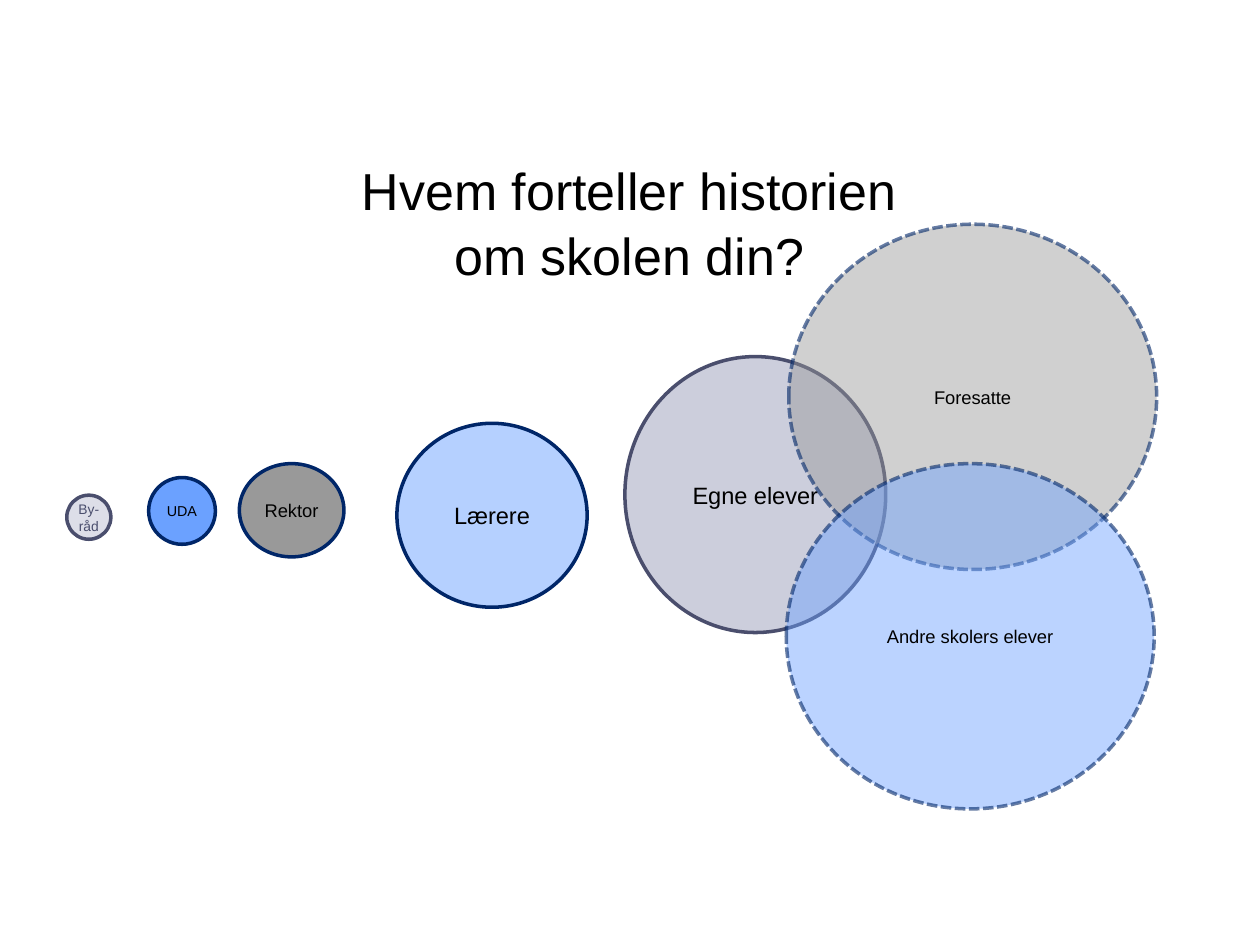
from dataclasses import dataclass

from pptx import Presentation
from pptx.dml.color import RGBColor as RGB
from pptx.enum.dml import MSO_LINE as Dash
from pptx.enum.shapes import MSO_SHAPE as Shape
from pptx.enum.text import MSO_ANCHOR as Anchor, MSO_AUTO_SIZE as Fit, PP_ALIGN as Align
from pptx.oxml.ns import qn
from pptx.util import Inches, Pt

FONT = "Arial"
BLACK = RGB(0x00, 0x00, 0x00)
NAVY = RGB(0x00, 0x26, 0x68)
SLATE = RGB(0x4A, 0x4E, 0x6D)
BLUE = RGB(0x6B, 0xA1, 0xFF)
SKY = RGB(0xB5, 0xD0, 0xFF)
GREY = RGB(0x99, 0x99, 0x99)
LILAC = RGB(0xCC, 0xCE, 0xDC)
PALE = RGB(0xDD, 0xDE, 0xE8)


@dataclass(frozen=True)
class Group:
    """A circle for one group of storytellers; lengths in inches."""
    name: str
    left: float
    top: float
    width: float
    height: float
    fill: RGB
    size: float
    line: RGB = NAVY
    ink: RGB = BLACK
    pad_x: float = 0
    pad_y: float = 0
    faint: bool = False


GROUPS = [
    Group("UDA", 1.18, 3.79, 0.53, 0.53, BLUE, 8.2, pad_x=0.03),
    Group("Rektor", 1.9, 3.68, 0.83, 0.74, GREY, 10.5),
    Group("Egne elever", 4.96, 2.83, 2.07, 2.19, LILAC, 13.5, line=SLATE,
          pad_x=0.1, pad_y=0.05),
    Group("Lærere", 3.15, 3.36, 1.51, 1.46, SKY, 13.5, pad_x=0.1, pad_y=0.05),
    Group("By-råd", 0.53, 3.93, 0.35, 0.35, PALE, 7.9, line=SLATE, ink=SLATE,
          pad_y=0.03),
    Group("Foresatte", 6.26, 1.78, 2.92, 2.74, GREY, 10.5, faint=True),
    Group("Andre skolers elever", 6.24, 3.68, 2.92, 2.74, BLUE, 10.5, faint=True),
]


def set_alpha(part, percent: int) -> None:
    """Make a solid fill inside the given XML part see-through."""
    color = part.find(qn("a:solidFill"))[0]
    alpha = color.makeelement(qn("a:alpha"), {"val": str(percent * 1000)})
    color.append(alpha)


def add_run(para, text: str, size: float, ink: RGB) -> None:
    para.alignment = Align.CENTER
    run = para.add_run()
    run.text = text
    run.font.name = FONT
    run.font.size = Pt(size)
    run.font.color.rgb = ink


def set_frame(frame, pad_x: float, pad_y: float, anchor: Anchor) -> None:
    frame.word_wrap = True
    frame.auto_size = Fit.NONE
    frame.vertical_anchor = anchor
    frame.margin_left = frame.margin_right = Inches(pad_x)
    frame.margin_top = frame.margin_bottom = Inches(pad_y)


def add_title(slide, lines: list[str]) -> None:
    title = slide.shapes.title
    title.left, title.top = Inches(1.62), Inches(1.16)
    title.width, title.height = Inches(6.75), Inches(0.94)
    frame = title.text_frame
    set_frame(frame, 0.1, 0.07, Anchor.TOP)
    for i, line in enumerate(lines):
        para = frame.add_paragraph() if i else frame.paragraphs[0]
        para.line_spacing = 1.05
        para.space_before = Pt(0)
        add_run(para, line, 29.7, BLACK)


def add_group(slide, group: Group) -> None:
    shape = slide.shapes.add_shape(
        Shape.OVAL, Inches(group.left), Inches(group.top),
        Inches(group.width), Inches(group.height))
    shape.shadow.inherit = False
    shape.fill.solid()
    shape.fill.fore_color.rgb = group.fill
    shape.line.color.rgb = group.line
    shape.line.width = Pt(2)
    if group.faint:
        shape.line.dash_style = Dash.SQUARE_DOT
        props = shape.element.spPr
        set_alpha(props, 46)
        set_alpha(props.find(qn("a:ln")), 60)
    frame = shape.text_frame
    set_frame(frame, group.pad_x, group.pad_y, Anchor.MIDDLE)
    add_run(frame.paragraphs[0], group.name, group.size, group.ink)


def main() -> None:
    deck = Presentation()
    deck.slide_width, deck.slide_height = Inches(10), Inches(7.5)
    slide = deck.slides.add_slide(deck.slide_layouts[5])
    add_title(slide, ["Hvem forteller historien", "om skolen din?"])
    for group in GROUPS:
        add_group(slide, group)
    deck.save("out.pptx")


if __name__ == "__main__":
    main()
